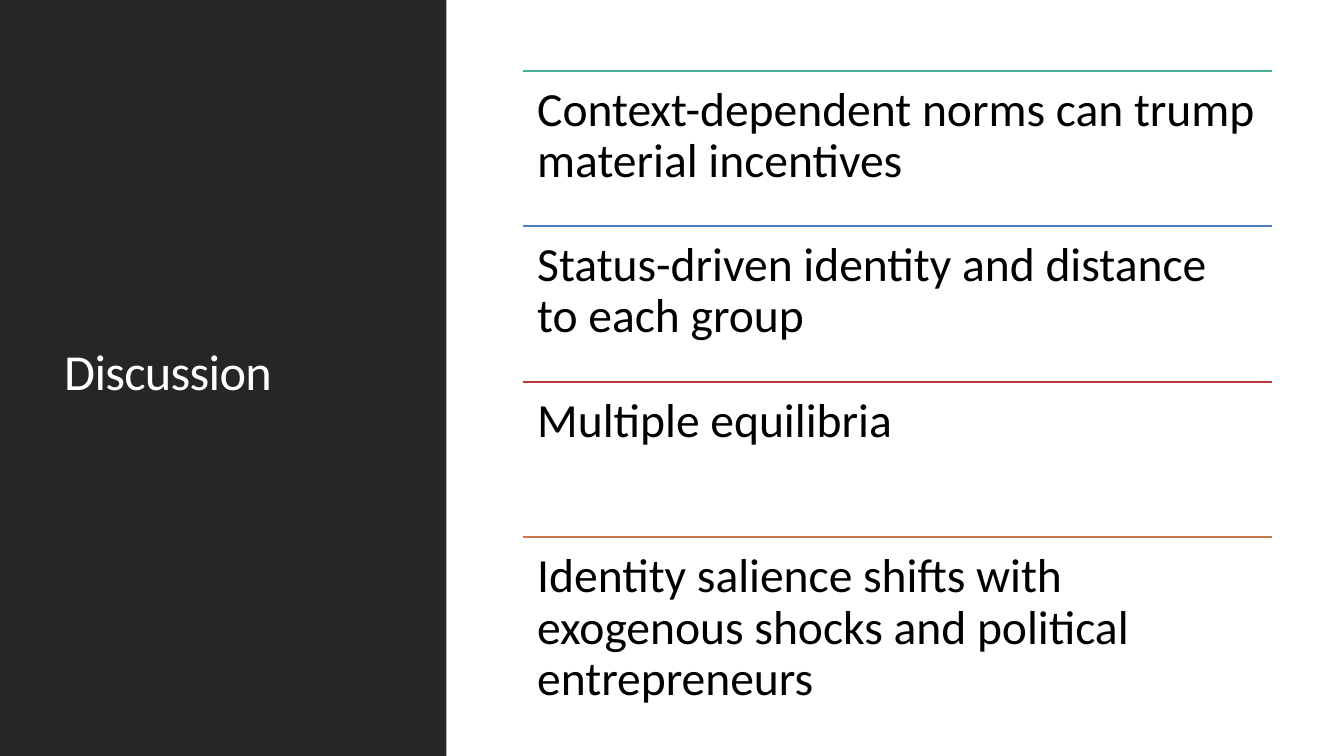
from dataclasses import dataclass

from lxml.etree import SubElement
from pptx import Presentation
from pptx.dml.color import RGBColor
from pptx.enum.shapes import MSO_CONNECTOR, MSO_SHAPE
from pptx.enum.text import MSO_ANCHOR, PP_ALIGN
from pptx.oxml.ns import qn
from pptx.slide import Slide
from pptx.util import Cm, Pt

COLORS = {
    "panel": "262626",
    "title": "FFFFFF",
    "body": "000000",
    "green": "46B196",
    "blue": "4D7EC3",
    "red": "B13B3E",
    "orange": "C37B4D",
}

SLIDE_WIDTH, SLIDE_HEIGHT = 33.87, 19.05
PANEL_WIDTH = 11.25
LIST_LEFT, LIST_TOP, LIST_WIDTH = 13.18, 1.78, 18.87
ROW_HEIGHT = 3.92


@dataclass(frozen=True)
class TextStyle:
    size: float
    color: str
    line_spacing: float
    anchor: MSO_ANCHOR
    inset_x: float
    inset_y: float
    tracking: int = 0


@dataclass(frozen=True)
class Point:
    text: str
    color: str


TITLE_STYLE = TextStyle(36, "title", 0.8, MSO_ANCHOR.MIDDLE, 0.25, 0.13, -50)
POINT_STYLE = TextStyle(34, "body", 0.9, MSO_ANCHOR.TOP, 0.36, 0.36)

POINTS = [
    Point("Context-dependent norms can trump material incentives", "green"),
    Point("Status-driven identity and distance to each group", "blue"),
    Point("Multiple equilibria", "red"),
    Point("Identity salience shifts with exogenous shocks and political entrepreneurs", "orange"),
]


def rgb(name: str) -> RGBColor:
    return RGBColor.from_string(COLORS[name])


def apply(target: object, values: dict) -> None:
    for name, value in values.items():
        setattr(target, name, value)


def add_panel(page: Slide) -> None:
    panel = page.shapes.add_shape(
        MSO_SHAPE.RECTANGLE, 0, 0, Cm(PANEL_WIDTH), Cm(SLIDE_HEIGHT)
    )
    panel.shadow.inherit = False
    panel.fill.solid()
    panel.fill.fore_color.rgb = rgb("panel")
    panel.line.fill.background()


def add_text(
    page: Slide, text: str, left: float, top: float, width: float, height: float, style: TextStyle
) -> None:
    box = page.shapes.add_textbox(Cm(left), Cm(top), Cm(width), Cm(height))
    apply(box.text_frame, {
        "word_wrap": True,
        "vertical_anchor": style.anchor,
        "margin_left": Cm(style.inset_x),
        "margin_right": Cm(style.inset_x),
        "margin_top": Cm(style.inset_y),
        "margin_bottom": Cm(style.inset_y),
    })
    para = box.text_frame.paragraphs[0]
    apply(para, {"alignment": PP_ALIGN.LEFT, "line_spacing": style.line_spacing})
    span = para.add_run()
    span.text = text
    apply(span.font, {"name": "Calibri", "size": Pt(style.size)})
    span.font.color.rgb = rgb(style.color)
    if style.tracking:
        span._r.get_or_add_rPr().set("spc", str(style.tracking))


def add_rule(page: Slide, top: float, color: str) -> None:
    rule = page.shapes.add_connector(
        MSO_CONNECTOR.STRAIGHT, Cm(LIST_LEFT), Cm(top), Cm(LIST_LEFT + LIST_WIDTH), Cm(top)
    )
    rule.line.width = Pt(1.25)
    rule.line.color.rgb = rgb(color)
    SubElement(rule._element.spPr, qn("a:effectLst"))


def main() -> None:
    deck = Presentation()
    apply(deck, {"slide_width": Cm(SLIDE_WIDTH), "slide_height": Cm(SLIDE_HEIGHT)})
    page = deck.slides.add_slide(deck.slide_layouts[6])
    add_panel(page)
    add_text(page, "Discussion", 1.37, 1.45, 8.56, 16.03, TITLE_STYLE)
    for index, point in enumerate(POINTS):
        top = LIST_TOP + index * ROW_HEIGHT
        add_rule(page, top, point.color)
        add_text(page, point.text, LIST_LEFT, top, LIST_WIDTH, ROW_HEIGHT, POINT_STYLE)
    deck.save("out.pptx")


if __name__ == "__main__":
    main()
